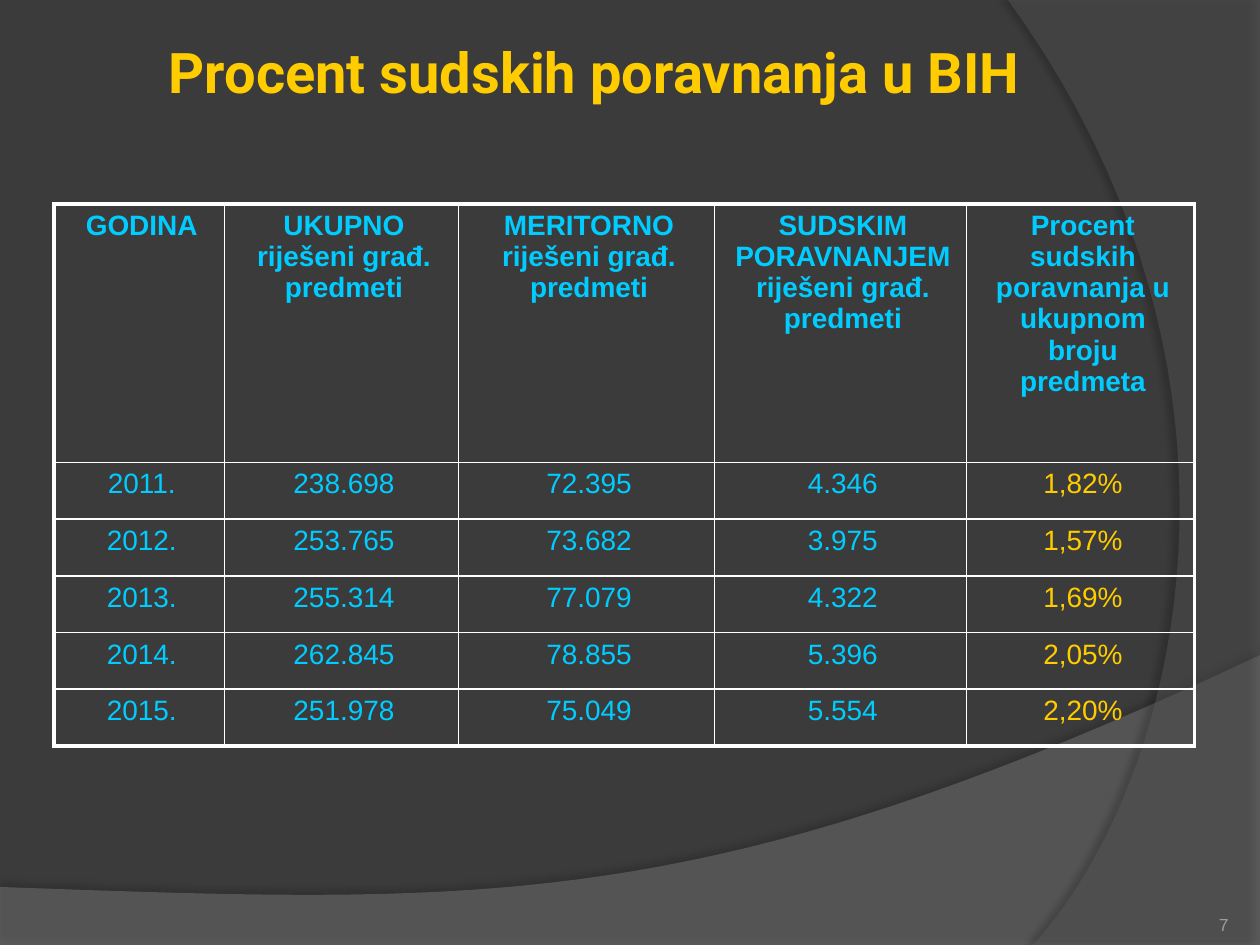
from lxml.etree import SubElement
from pptx import Presentation
from pptx.dml.color import RGBColor as RGB
from pptx.enum.text import MSO_ANCHOR as Anchor, PP_ALIGN as Align
from pptx.oxml.ns import qn
from pptx.util import Inches, Pt

COLS, ROWS = 100, 75          # slide grid
UNIT = Inches(0.1)            # one grid step

COLORS = {
    "background": "3B3B3B", "wave": "7F7F7F", "arc": "5E5E5E", "shadow": "000000",
    "gold": "FFCC00", "cyan": "00CCFF", "number": "9D9B9A", "border": "FFFFFF",
}

HEADERS = [
    "GODINA",
    "UKUPNO riješeni građ. predmeti",
    "MERITORNO riješeni građ. predmeti",
    "SUDSKIM PORAVNANJEM riješeni građ. predmeti",
    "Procent sudskih poravnanja u ukupnom broju predmeta",
]
DATA = [
    ["2011.", "238.698", "72.395", "4.346", "1,82%"],
    ["2012.", "253.765", "73.682", "3.975", "1,57%"],
    ["2013.", "255.314", "77.079", "4.322", "1,69%"],
    ["2014.", "262.845", "78.855", "5.396", "2,05%"],
    ["2015.", "251.978", "75.049", "5.554", "2,20%"],
]
COL_WIDTHS = [13.5, 18.6, 20.3, 20, 18.1]
ROW_HEIGHTS = [20.5] + [4.5] * len(DATA)


def grid(*steps):
    return [round(n * UNIT) for n in steps]


def rgb(name):
    return RGB.from_string(COLORS[name])


def add_color(parent, name, alpha=100):
    clr = SubElement(parent, qn("a:srgbClr"), val=COLORS[name])
    if alpha < 100:
        SubElement(clr, qn("a:alpha"), val=str(alpha * 1000))


def style_text(p, text, font, size, color, align, bold=False):
    p.text, p.alignment = text, align
    p.font.name, p.font.size, p.font.bold = font, Pt(size), bold
    p.font.color.rgb = rgb(color)


def bezier(p0, p1, p2, p3, steps=40):
    for i in range(steps + 1):
        t = i / steps
        u = 1 - t
        yield tuple(u**3 * a + 3 * u * u * t * b + 3 * u * t * t * c + t**3 * d
                    for a, b, c, d in zip(p0, p1, p2, p3))


def add_swoosh(slide, box, corners, curve, color, alpha, shadow):
    """Translucent outline; corners and curve are shares of the box."""
    x, y, w, h = grid(*box)
    points = [(round(x + px * w), round(y + py * h))
              for px, py in [*corners, *bezier(*curve)]]
    builder = slide.shapes.build_freeform(*points[0], scale=1.0)
    builder.add_line_segments(points[1:], close=True)
    sp = builder.convert_to_shape()
    sp.line.fill.background()
    sp.fill.solid()
    sp.fill.fore_color.rgb = rgb(color)
    clr = sp.fill._xPr.find(qn("a:solidFill"))[0]
    SubElement(clr, qn("a:alpha"), val=str(alpha * 1000))

    # Soft shadow along the edge
    sp.shadow.inherit = False
    opacity, blur, dist, angle = shadow
    effects = sp._element.spPr.find(qn("a:effectLst"))
    outer = SubElement(effects, qn("a:outerShdw"), blurRad=str(Pt(blur)),
                       dist=str(Pt(dist)), dir=str(angle * 60000), rotWithShape="0")
    add_color(outer, "shadow", opacity)


def add_backdrop(slide):
    slide.background.fill.solid()
    slide.background.fill.fore_color.rgb = rgb("background")
    add_swoosh(slide, (0, 52, COLS, 23), [(0, 0.8), (0, 1), (1, 1)],
               [(1, 0), (0.56, 0.9), (0.39, 0.86), (0, 0.8)],
               "wave", 45, (35, 4, 3.5, 270))
    add_swoosh(slide, (80, 0, 20, ROWS), [(1, 0), (1, 1)],
               [(0.1, 1), (0.68, 0.83), (1.09, 0.4), (0, 0)],
               "arc", 40, (45, 4, 4, 180))


def add_text(slide, box, anchor, side_inset, *style, **options):
    tf = slide.shapes.add_textbox(*grid(*box)).text_frame
    tf.word_wrap, tf.vertical_anchor = True, anchor
    tf.margin_left = tf.margin_right = Inches(side_inset)
    tf.margin_top = tf.margin_bottom = 0
    style_text(tf.paragraphs[0], *style, **options)


def set_borders(cell, outer):
    """Thick lines on the sides named in outer, thin ones elsewhere."""
    tcPr = cell._tc.get_or_add_tcPr()
    for side in "LRTB":
        width = Pt(2.25 if side in outer else 1)
        ln = SubElement(tcPr, qn(f"a:ln{side}"), w=str(width))
        add_color(SubElement(ln, qn("a:solidFill")), "border")
    cell.fill.background()


def add_settlement_table(slide, box):
    rows = [HEADERS, *DATA]
    last_row, last_col = len(rows) - 1, len(HEADERS) - 1
    table = slide.shapes.add_table(len(rows), len(HEADERS), *grid(*box)).table
    table.first_row = table.horz_banding = False
    for col, width in zip(table.columns, grid(*COL_WIDTHS)):
        col.width = width
    for row, height in zip(table.rows, grid(*ROW_HEIGHTS)):
        row.height = height

    for r, values in enumerate(rows):
        for c, text in enumerate(values):
            cell = table.cell(r, c)
            cell.margin_left = Inches(0.14)
            color = "gold" if r and c == last_col else "cyan"
            style_text(cell.text_frame.paragraphs[0], text, "Arial", 16, color,
                       Align.CENTER, bold=r == 0)
            edges = {"L": c == 0, "R": c == last_col, "T": r == 0, "B": r == last_row}
            set_borders(cell, [side for side, is_outer in edges.items() if is_outer])


def main():
    prs = Presentation()
    prs.slide_width, prs.slide_height = grid(COLS, ROWS)
    slide = prs.slides.add_slide(prs.slide_layouts[6])
    add_backdrop(slide)
    # Slide number
    add_text(slide, (89.2, 70.2, 8.3, 4), Anchor.BOTTOM, 0,
             "7", "Arial", 10, "number", Align.RIGHT)
    # Title
    add_text(slide, (5, 3, 84.4, 12.5), Anchor.TOP, 0.05,
             "Procent sudskih poravnanja u BIH", "Roboto", 32, "gold",
             Align.CENTER, bold=True)
    add_settlement_table(slide, (4.3, 16.2, sum(COL_WIDTHS), sum(ROW_HEIGHTS)))
    prs.save("out.pptx")


if __name__ == "__main__":
    main()
